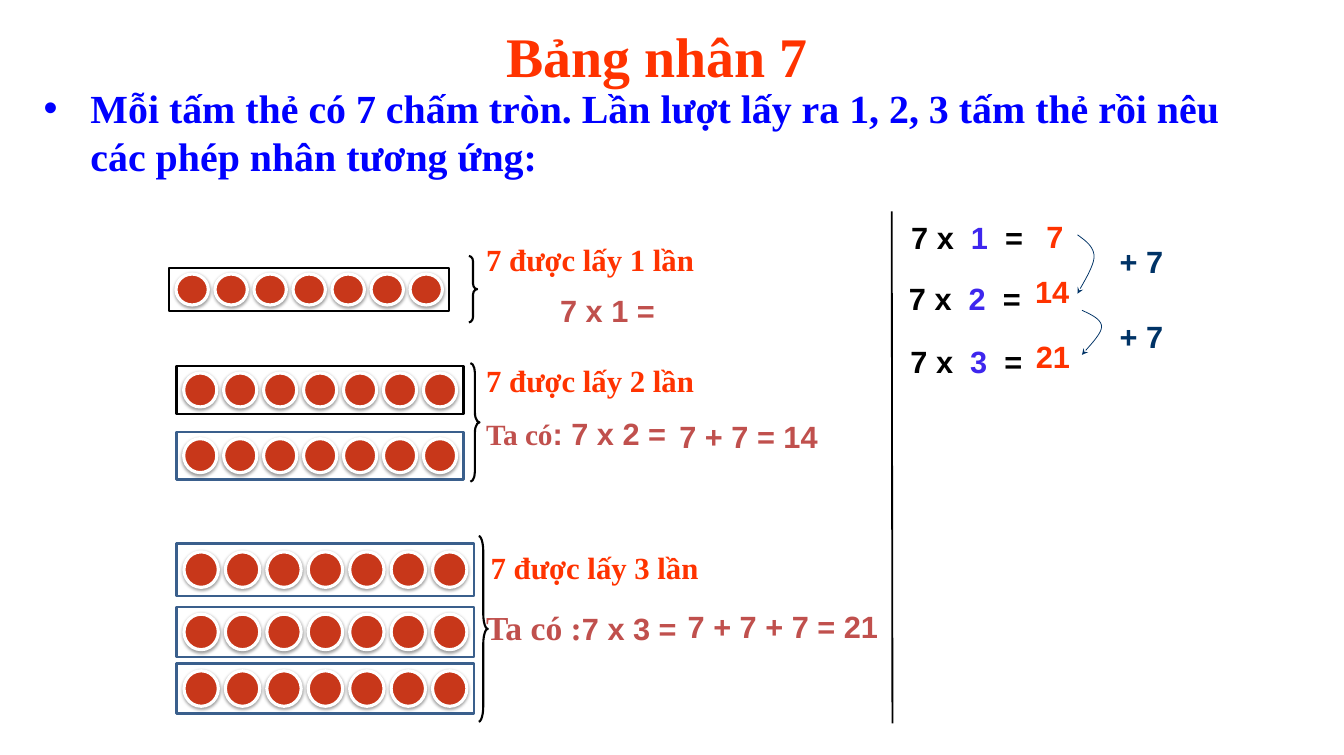
from dataclasses import dataclass

from lxml.etree import SubElement
from pptx import Presentation
from pptx.dml.color import RGBColor
from pptx.enum.shapes import MSO_CONNECTOR as Connector, MSO_SHAPE as Shape
from pptx.enum.text import MSO_ANCHOR as Anchor, MSO_AUTO_SIZE as AutoSize, PP_ALIGN as Align
from pptx.oxml import parse_xml
from pptx.oxml.ns import nsdecls, qn
from pptx.util import Inches, Pt


@dataclass(frozen=True)
class Theme:
    serif: str = "Times New Roman"
    sans: str = "Arial"
    red: str = "FF3300"
    brick: str = "C0504D"
    blue: str = "0000FF"
    violet: str = "3E26EE"
    navy: str = "003366"
    steel: str = "3A5F8C"
    dot: str = "C8371A"
    black: str = "000000"
    white: str = "FFFFFF"
    title_size: float = 53.3
    task_size: float = 38
    label_size: float = 29.3
    answer_size: float = 32
    small_size: float = 28


theme = Theme()
presentation = Presentation()
presentation.slide_width, presentation.slide_height = Inches(17.8), Inches(10)
COLUMN = presentation.slide_width / 178
ROW = presentation.slide_height / 100
slide = presentation.slides.add_slide(presentation.slide_layouts[5])


def grid(column, row, columns, rows):
    """Turn a place and a size in grid units into slide lengths."""
    return [round(value) for value in (column * COLUMN, row * ROW, columns * COLUMN, rows * ROW)]


def write_text(text, place, box=None, font=theme.sans, size=theme.label_size,
               color=theme.black, align=Align.LEFT, wrap=True, bullet=None):
    """Write a string, or a list of (string, format changes), in a box."""
    box = box or slide.shapes.add_textbox(*grid(*place))
    box.left, box.top, box.width, box.height = grid(*place)
    frame = box.text_frame
    frame.word_wrap = wrap
    frame.auto_size = AutoSize.NONE
    frame.vertical_anchor = Anchor.TOP
    paragraph = frame.paragraphs[0]
    paragraph.alignment = align
    if bullet:
        properties = paragraph._p.get_or_add_pPr()
        properties.set("marL", str(Inches(0.62)))
        properties.set("indent", str(-Inches(0.62)))
        SubElement(properties, qn("a:buFont")).set("typeface", theme.sans)
        SubElement(properties, qn("a:buChar")).set("char", bullet)
    for words, changes in [(text, {})] if isinstance(text, str) else text:
        run = paragraph.add_run()
        run.text = words
        run.font.name = changes.get("font", font)
        run.font.size = Pt(changes.get("size", size))
        run.font.color.rgb = RGBColor.from_string(changes.get("color", color))
        run.font.bold = True


# Title and task
write_text("Bảng nhân 7", (47.3, 2.4, 79.4, 10), box=slide.shapes.title, font=theme.serif,
           size=theme.title_size, color=theme.red, align=Align.CENTER)
write_text("Mỗi tấm thẻ có 7 chấm tròn. Lần lượt lấy ra 1, 2, 3 tấm thẻ rồi nêu "
           "các phép nhân tương ứng:", (4.8, 10.6, 159.2, 13.8), font=theme.serif,
           size=theme.task_size, color=theme.blue, bullet="•")

# Braces: place and depth of the curl
for place, curl in [((62.1, 33.9, 1.1, 8.8), 0.66), ((62.3, 48.1, 1.2, 15.7), 1.11),
                    ((63.4, 71, 1.2, 24.6), 1.7)]:
    brace = slide.shapes.add_shape(Shape.RIGHT_BRACE, *grid(*place))
    brace.adjustments[0] = curl
    brace.fill.background()
    brace.line.color.rgb = RGBColor.from_string(theme.black)
    brace.line.width = Pt(2)
    brace.shadow.inherit = False

# Divider between the cards and the times table
left, top, right, bottom = grid(118.1, 28, 118.2, 95.8)
divider = slide.shapes.add_connector(Connector.STRAIGHT, left, top, right, bottom)
divider.line.color.rgb = RGBColor.from_string(theme.black)
divider.line.width = Pt(1.75)
SubElement(divider._element.spPr, qn("a:effectLst"))

# Text beside the cards
for times, column, row in [(1, 63.4, 31.4), (2, 63.4, 47.4), (3, 64, 72.2)]:
    write_text(f"7 được lấy {times} lần", (column, row, 47.8, 5.9), font=theme.serif, color=theme.red)
for text, place, wrap in [
    ("7 x 1 =", (73.2, 38.1, 20.2, 5.9), True),
    ([("Ta có", {"font": theme.serif, "size": theme.small_size}), (": 7 x 2 =", {})],
     (63.4, 54.5, 26.1, 5.9), False),
    ([("Ta có :", {"font": theme.serif, "size": theme.answer_size}), ("7 x 3 =", {})],
     (63.4, 79.9, 27.5, 6.4), False),
    ("7 + 7 = 14", (89, 54.9, 23.3, 5.9), True),
    ("7 + 7 + 7 = 21", (90.1, 80, 31.1, 5.9), True),
]:
    write_text(text, place, color=theme.brick, wrap=wrap)

# Times table: factor, place of the product, place of the result
for factor, column, row, result_column, result_row in [
    (1, 119.7, 28.5, 137.6, 28.3), (2, 119.4, 36.6, 136.1, 35.7), (3, 119.6, 44.9, 136.2, 44.2),
]:
    write_text([("7 x  ", {}), (str(factor), {"color": theme.violet}), ("  =", {})],
               (column, row, 17.8, 5.9))
    write_text(str(7 * factor), (result_column, result_row, 9.1, 5.9), color=theme.red)

# Curved arrows, each made of two cubic curves, with their step labels
STEPS = 12
for label_row, curves in [
    (31.6, [[(142.7, 31.1), (143.8, 31.9), (144.9, 32.7), (144.9, 34)],
            [(144.9, 34), (144.9, 35.3), (143.2, 37.9), (142.7, 38.9)]]),
    (41.6, [[(143.3, 41.1), (144.6, 41.7), (145.9, 42.3), (145.9, 43.3)],
            [(145.9, 43.3), (145.9, 44.3), (143.9, 46.2), (143.3, 47)]]),
]:
    points = []
    for curve in curves:
        for step in range(STEPS + 1):
            t = step / STEPS
            weights = ((1 - t) ** 3, 3 * t * (1 - t) ** 2, 3 * t * t * (1 - t), t ** 3)
            x, y = (sum(w * point[axis] for w, point in zip(weights, curve)) for axis in (0, 1))
            points.append((round(x * COLUMN), round(y * ROW)))
    builder = slide.shapes.build_freeform(*points[0])
    builder.add_line_segments(points[1:], close=False)
    arrow = builder.convert_to_shape()
    arrow.fill.background()
    arrow.line.color.rgb = RGBColor.from_string(theme.navy)
    arrow.line.width = Pt(0.75)
    arrow.shadow.inherit = False
    SubElement(arrow.line._get_or_add_ln(), qn("a:tailEnd")).set("type", "stealth")
    write_text("+ 7", (147.3, label_row, 12.5, 5.9), color=theme.navy)

# Card sets: left, width, dot height, then (top, height, outline) of each card
card_sets = [
    (22.4, 37.1, 4.1, [(35.5, 5.7, theme.black)]),
    (23.4, 38, 4.5, [(48.5, 6.3, theme.black), (57.2, 6.3, theme.steel)]),
    (23.4, 39.4, 4.7, [(72, 6.9, theme.steel), (80.4, 6.6, theme.steel), (87.9, 6.6, theme.steel)]),
]
for left, width, dot_height, cards in card_sets:
    group = slide.shapes.add_group_shape()
    pitch = width / 7.18
    dot_width = pitch * 0.83
    for top, height, outline in cards:
        card = group.shapes.add_shape(Shape.RECTANGLE, *grid(left, top, width, height))
        card.fill.solid()
        card.fill.fore_color.rgb = RGBColor.from_string(theme.white)
        card.line.color.rgb = RGBColor.from_string(outline)
        card.line.width = Pt(2.25)
        card.shadow.inherit = False
        for index in range(7):
            dot_left = left + width / 2 + (index - 3) * pitch - dot_width / 2
            dot_top = top + (height - dot_height) / 2
            dot = group.shapes.add_shape(Shape.OVAL, *grid(dot_left, dot_top, dot_width, dot_height))
            dot.fill.solid()
            dot.fill.fore_color.rgb = RGBColor.from_string(theme.dot)
            dot.line.color.rgb = RGBColor.from_string(theme.white)
            dot.line.width = Pt(3)
            dot._element.spPr.append(parse_xml(
                f'<a:effectLst {nsdecls("a")}><a:outerShdw blurRad="{Pt(3.1)}" dist="{Pt(1.6)}" '
                f'dir="5400000" rotWithShape="0"><a:srgbClr val="{theme.black}">'
                '<a:alpha val="38000"/></a:srgbClr></a:outerShdw></a:effectLst>'))

presentation.save("out.pptx")
